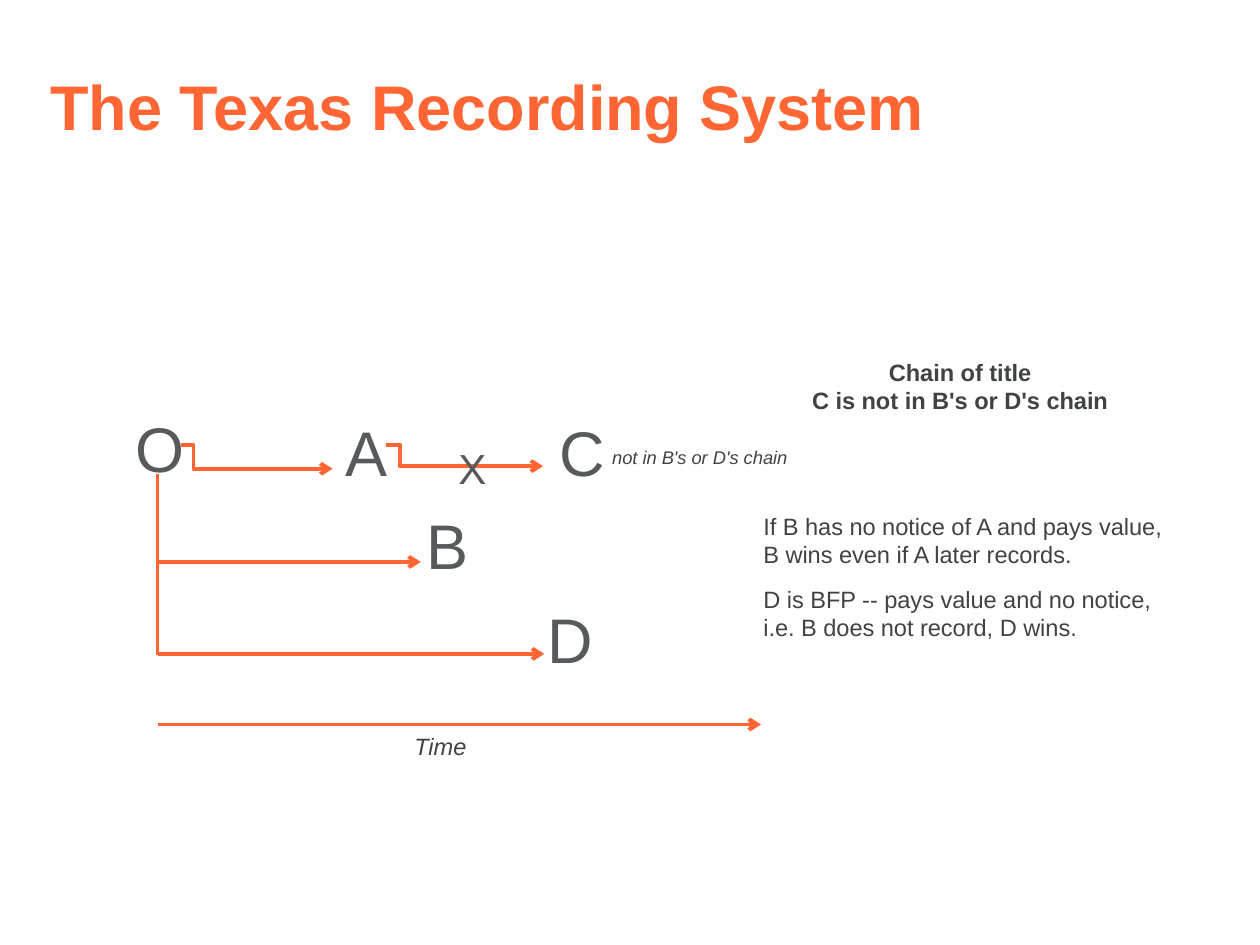
import pptx
import pptx.dml.color
import pptx.enum.shapes
import pptx.enum.text
import pptx.oxml.ns
import pptx.util
from lxml import etree

Inches = pptx.util.Inches
Pt = pptx.util.Pt
qn = pptx.oxml.ns.qn
ALIGN = pptx.enum.text.PP_ALIGN
CONNECTOR = pptx.enum.shapes.MSO_CONNECTOR

COLORS = {"accent": "FF6633", "party": "565A5C", "body": "404345"}


class DiagramSlide:
    font_name = "Arial"
    line_width = 2.25

    def __init__(self, prs):
        self.slide = prs.slides.add_slide(prs.slide_layouts[5])

    def color(self, name):
        return pptx.dml.color.RGBColor.from_string(COLORS[name])

    def fill_text(self, frame, lines, size, color, bold=False, italic=False,
                  align=ALIGN.LEFT):
        frame.word_wrap = True
        frame.vertical_anchor = pptx.enum.text.MSO_ANCHOR.TOP
        frame.text = "\n".join(lines)
        for paragraph in frame.paragraphs:
            paragraph.alignment = align
            font = paragraph.font
            font.name, font.size = self.font_name, Pt(size)
            font.bold, font.italic = bold, italic
            font.color.rgb = self.color(color)

    def title(self, text, left, top, width, height):
        title = self.slide.shapes.title
        title.left, title.top = Inches(left), Inches(top)
        title.width, title.height = Inches(width), Inches(height)
        frame = title.text_frame
        self.fill_text(frame, [text], 36, "accent", bold=True)
        frame.auto_size = pptx.enum.text.MSO_AUTO_SIZE.NONE
        frame.paragraphs[0].line_spacing = Pt(48)

    def label(self, lines, left, top, width, height, size=13.5, color="body",
              **style):
        box = self.slide.shapes.add_textbox(
            Inches(left), Inches(top), Inches(width), Inches(height))
        self.fill_text(box.text_frame, lines, size, color, **style)

    def party(self, letter, left, top, width):
        self.label([letter], left, top, width, 0.71, size=36, color="party")

    def line(self, start, end, arrow=True, bend=None):
        """Draw a line; bend is the share of the width before an elbow."""
        kind = CONNECTOR.STRAIGHT if bend is None else CONNECTOR.ELBOW
        connector = self.slide.shapes.add_connector(
            kind, *(Inches(value) for value in start + end))
        connector.line.color.rgb = self.color("accent")
        connector.line.width = Pt(self.line_width)
        properties = connector._element.spPr
        if bend is not None:
            guides = properties.find(qn("a:prstGeom")).get_or_add_avLst()
            etree.SubElement(guides, qn("a:gd"), name="adj1",
                             fmla=f"val {round(bend * 100000)}")
        if arrow:
            etree.SubElement(properties.find(qn("a:ln")),
                             qn("a:tailEnd"), type="arrow")
        etree.SubElement(properties, qn("a:effectLst"))


def main():
    prs = pptx.Presentation()
    prs.slide_width, prs.slide_height = Inches(10), Inches(7.5)
    page = DiagramSlide(prs)

    page.title("The Texas Recording System", 0.3, 0.42, 7.19, 0.65)

    trunk = 1.25
    page.line((1.44, 3.53), (2.64, 3.72), bend=0.08)
    page.line((3.06, 3.53), (4.31, 3.7), bend=0.09)
    page.line((trunk, 3.76), (trunk, 5.2), arrow=False)
    for y, end in ((4.46, 3.34), (5.19, 4.32), (5.75, 6.04)):
        page.line((trunk, y), (end, y))

    for letter, left, top, width in (
            ("O", 0.98, 3.2, 0.46), ("A", 2.64, 3.23, 0.45),
            ("C", 4.34, 3.23, 0.47), ("B", 3.29, 3.97, 0.42),
            ("D", 4.25, 4.72, 0.47)):
        page.party(letter, left, top, width)
    page.label(["X"], 3.54, 3.46, 0.35, 0.5, size=24, color="party")

    page.label(["Chain of title", "C is not in B's or D's chain"],
               5.62, 2.79, 4, 0.56, bold=True, align=ALIGN.CENTER)
    page.label(["not in B's or D's chain"], 4.76, 3.49, 1.65, 0.28,
               size=10.5, italic=True)
    page.label(["If B has no notice of A and pays value,",
                "B wins even if A later records."], 5.96, 4.01, 3.55, 0.56)
    page.label(["D is BFP -- pays value and no notice,",
                "i.e. B does not record, D wins."], 5.96, 4.59, 3.85, 0.56)
    page.label(["Time"], 3.19, 5.76, 0.71, 0.33, italic=True)

    prs.save("out.pptx")


if __name__ == "__main__":
    main()
